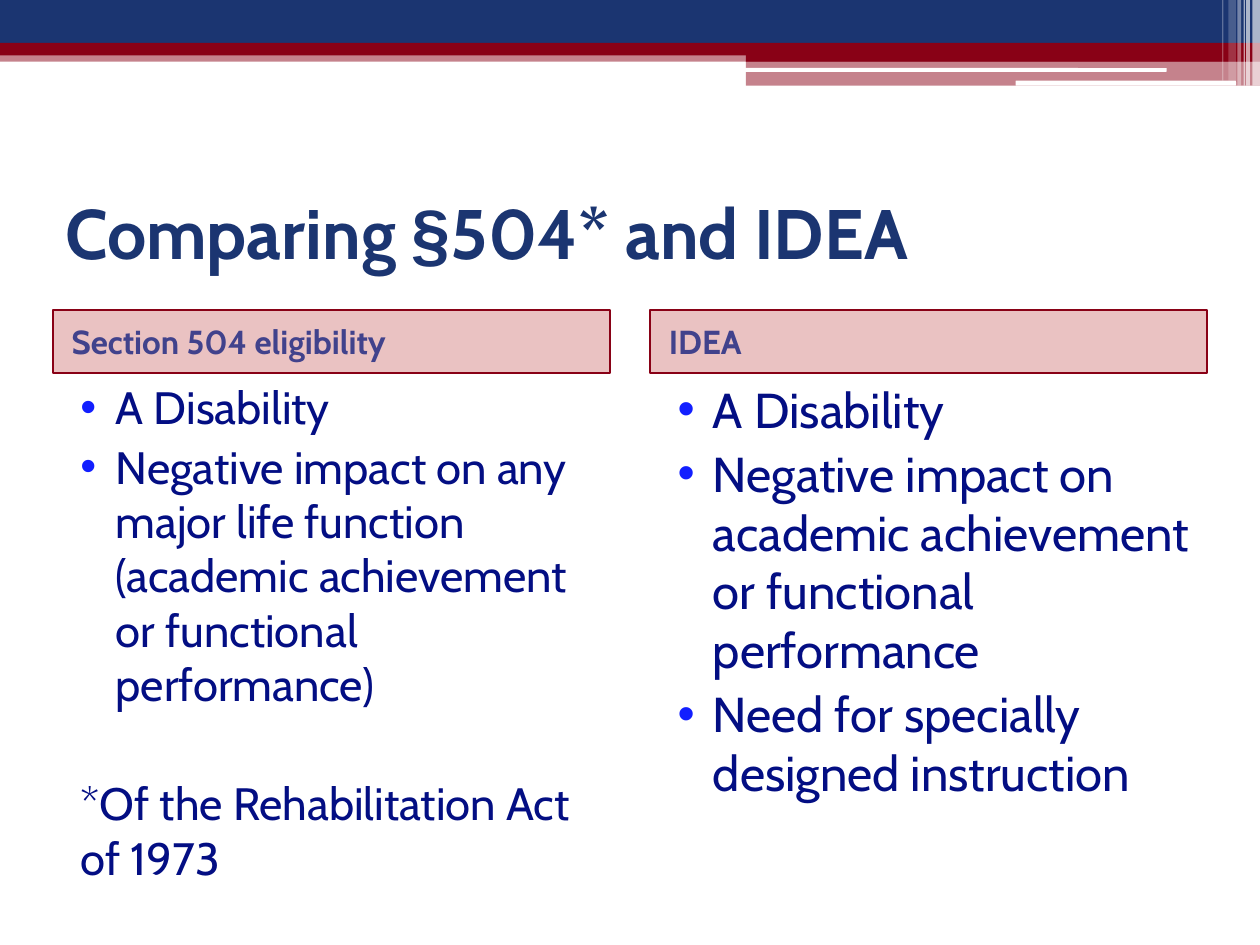
from pptx import Presentation
from pptx.dml.color import RGBColor
from pptx.enum.shapes import MSO_SHAPE
from pptx.enum.text import MSO_ANCHOR
from pptx.oxml.xmlchemy import OxmlElement
from pptx.util import Inches, Pt

NAVY = RGBColor(0x1B, 0x35, 0x71)
CRIMSON = RGBColor(0x89, 0x01, 0x16)
RED = RGBColor(0xAB, 0x00, 0x00)
WHITE = RGBColor(0xFF, 0xFF, 0xFF)
HEADING_BLUE = RGBColor(0x41, 0x42, 0x8C)
TEXT_BLUE = RGBColor(0x03, 0x0E, 0x83)
BULLET_BLUE = RGBColor(0x12, 0x1F, 0xFF)

# The slide is a grid of 100 columns by 75 rows of square cells
COLUMNS, ROWS = 100, 75
CELL = Inches(10) // COLUMNS
HEADER_ROWS = 5


def cells(*counts):
    return [round(count * CELL) for count in counts]


def add_child(parent, tag, **attributes):
    child = OxmlElement(tag)
    for key, value in attributes.items():
        child.set(key, str(value))
    parent.append(child)
    return child


def add_block(slide, box, color, opacity=100, kind=MSO_SHAPE.RECTANGLE):
    """Add a filled block without outline; opacity is a percentage."""
    block = slide.shapes.add_shape(kind, *cells(*box))
    block.shadow.inherit = False
    block.fill.solid()
    block.fill.fore_color.rgb = color
    block.line.fill.background()
    if opacity < 100:
        color_node = block.fill._xPr.find(".//{*}srgbClr")
        add_child(color_node, "a:alpha", val=opacity * 1000)
    return block


def add_text_box(slide, box):
    frame = slide.shapes.add_textbox(*cells(*box)).text_frame
    frame.word_wrap = True
    return frame


def add_run(paragraph, text, size, color, bold=False, font="Cabin"):
    run = paragraph.add_run()
    run.text = text
    run.font.name = font
    run.font.size = Pt(size)
    run.font.bold = bold
    run.font.color.rgb = color


def indent(paragraph, left, first=0):
    properties = paragraph._p.get_or_add_pPr()
    left, first = cells(left, first)
    properties.set("marL", str(left))
    properties.set("indent", str(first))
    return properties


def add_bullet(paragraph):
    properties = indent(paragraph, 4, -2.8)
    bullet_color = add_child(properties, "a:buClr")
    add_child(bullet_color, "a:srgbClr", val=BULLET_BLUE)
    add_child(properties, "a:buFont", typeface="Arial")
    add_child(properties, "a:buChar", char="•")


def add_banner(slide, left, top, width):
    """Layered bands with a stepped tab and fading stripes at the right."""
    tab = 0.592 * width
    # Full-width bands, then the tab below them
    for x, y, height, color, opacity in (
        (0, 4, 0.9, CRIMSON, 49),
        (0, 0, 3.4, NAVY, 100),
        (0, 3.4, 1, CRIMSON, 100),
        (tab, 3.9, 1, CRIMSON, 100),
        (tab, 4.8, 2, CRIMSON, 49),
    ):
        add_block(slide, (left + x, top + y, width - x, height), color, opacity)

    # White slots cut into the tab
    for x, y, length, height in ((59.1, 5.4, 33.5, 0.3), (80.6, 6.4, 17.5, 0.4)):
        add_block(slide, (left + x, top + y, length, height), WHITE,
                  kind=MSO_SHAPE.ROUNDED_RECTANGLE)

    # Vertical stripes
    for x, thickness, height, opacity in (
        (99.4, 0.6, 6.8, 64), (98.9, 0.3, 6.8, 64), (98.7, 0.1, 6.8, 60),
        (98.2, 0.3, 6.8, 40), (97.5, 0.6, 6.4, 20), (97, 0.1, 6.4, 29),
    ):
        add_block(slide, (left + x, top, thickness, height), WHITE, opacity)


def add_title(slide, box):
    frame = add_text_box(slide, box)
    frame.vertical_anchor = MSO_ANCHOR.MIDDLE
    title = frame.paragraphs[0]
    for text, font in (("Comparing ", "Cabin"), ("§", "Arial"),
                       ("504* and IDEA", "Cabin")):
        add_run(title, text, 40, NAVY, bold=True, font=font)


def add_comparison(slide, box, heading, points, size, footnote=None):
    """One side of the comparison: heading bar, bullets, optional footnote."""
    left, top, width, height = box

    # Heading bar
    bar = add_block(slide, (left, top, width, HEADER_ROWS), RED, 24)
    bar.line.color.rgb = CRIMSON
    bar.line.width = Pt(1)
    bar.text_frame.word_wrap = True
    bar.text_frame.vertical_anchor = MSO_ANCHOR.MIDDLE
    label = bar.text_frame.paragraphs[0]
    indent(label, 0.5)
    label.alignment = 1
    add_run(label, heading, 19, HEADING_BLUE, bold=True)

    # Bulleted points
    body = add_text_box(
        slide, (left, top + HEADER_ROWS, width, height - HEADER_ROWS))
    for number, point in enumerate(points):
        paragraph = body.add_paragraph() if number else body.paragraphs[0]
        paragraph.space_before = Pt(3 if number else 0)
        add_bullet(paragraph)
        add_run(paragraph, point, size, TEXT_BLUE)

    # Footnote, set one line apart
    if footnote:
        note = body.add_paragraph()
        note.space_before = Pt(37)
        indent(note, 1.2)
        add_run(note, footnote, size, TEXT_BLUE)


def main():
    presentation = Presentation()
    presentation.slide_width, presentation.slide_height = cells(COLUMNS, ROWS)
    slide = presentation.slides.add_slide(presentation.slide_layouts[6])

    margin, gutter = 4.2, 3.2
    content = COLUMNS - 2 * margin
    side = (content - gutter) / 2
    top, height = 24.6, 47.5

    add_banner(slide, 0, 0, COLUMNS)
    add_title(slide, (margin, 12.5, content, 11.7))
    add_comparison(
        slide, (margin, top, side, height), "Section 504 eligibility",
        ["A Disability",
         "Negative impact on any major life function "
         "(academic achievement or functional performance)"],
        25.9, "*Of the Rehabilitation Act of 1973")
    add_comparison(
        slide, (margin + side + gutter, top, side, height), "IDEA",
        ["A Disability",
         "Negative impact on academic achievement or functional performance",
         "Need for specially designed instruction"],
        28)

    presentation.save("out.pptx")


if __name__ == "__main__":
    main()
